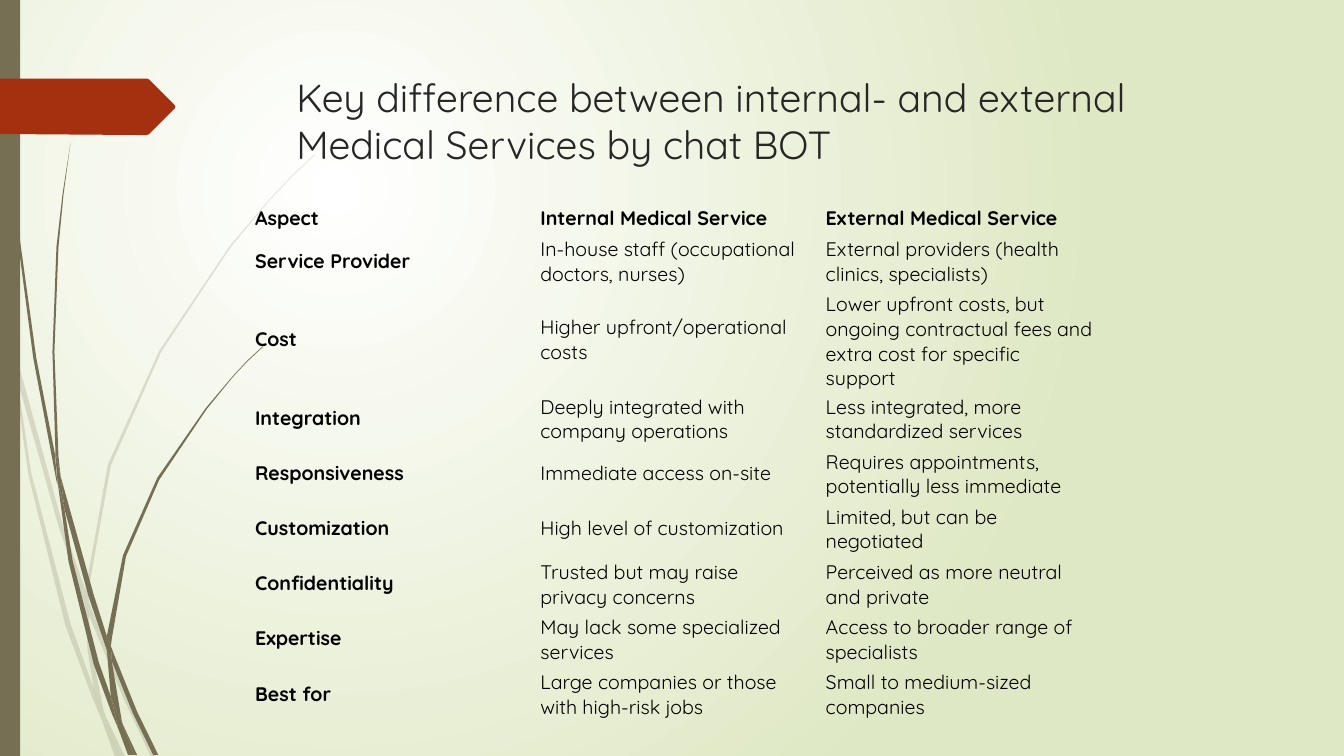
"""Build a slide comparing internal and external medical services."""
from lxml.etree import SubElement
from pptx import Presentation
from pptx.dml.color import RGBColor
from pptx.enum.shapes import MSO_SHAPE as Shape
from pptx.enum.text import MSO_ANCHOR as Anchor
from pptx.oxml.ns import qn

PX = 9144
FONT = "Quicksand"
OLIVE, RED, INK, BLACK = "766F54", "A53010", "262626", "000000"
BACKGROUND = ["FFFFFF", "DFE8C4"]
FOCUS = {"l": "50000", "t": "50000", "r": "100000", "b": "100000"}
NO_STYLE = "{2D5ABB26-0587-4C30-8999-92F81FD0307C}"

TITLE = "Key difference between internal- and external Medical Services by chat BOT"
TITLE_BOX = (284, 68, 975, 84)
TABLE_LEFT, TABLE_TOP, COLUMN = 245, 200, 283
LOW, HIGH = 31, 54
ROW_HEIGHTS = [LOW] + [HIGH] * 4 + [LOW] + [HIGH] * 3
ROWS = [
    ("Aspect", "Internal Medical Service", "External Medical Service"),
    ("Service Provider", "In-house staff (occupational doctors, nurses)",
     "External providers (health clinics, specialists)"),
    ("Cost", "Higher upfront/operational costs",
     "Lower upfront costs, but ongoing contractual fees and extra cost for specific support"),
    ("Integration", "Deeply integrated with company operations",
     "Less integrated, more standardized services"),
    ("Responsiveness", "Immediate access on-site",
     "Requires appointments, potentially less immediate"),
    ("Customization", "High level of customization", "Limited, but can be negotiated"),
    ("Confidentiality", "Trusted but may raise privacy concerns",
     "Perceived as more neutral and private"),
    ("Expertise", "May lack some specialized services",
     "Access to broader range of specialists"),
    ("Best for", "Large companies or those with high-risk jobs",
     "Small to medium-sized companies"),
]

PALE_BLADES = [
    [(11, 350), (9, 322), (0, 282), (0, 299), (10, 344)],
    [(58, 522), (84, 599), (85, 586), (62, 520), (14, 345), (17, 376)],
    [(92, 607), (88, 596), (88, 610), (123, 694), (150, 751), (155, 751), (127, 692)],
    [(119, 751), (124, 751), (105, 711)],
    [(93, 683), (70, 619), (31, 469), (17, 376), (11, 350), (28, 470), (65, 621),
     (92, 693), (101, 714), (99, 707)],
    [(84, 599), (87, 646), (93, 683), (96, 692), (105, 711), (103, 706), (91, 646),
     (88, 610), (88, 608)],
    [(88, 584), (110, 462), (160, 349), (229, 245), (268, 198), (290, 175), (312, 154),
     (312, 153), (289, 175), (268, 197), (228, 244), (158, 348), (107, 461), (85, 584),
     (85, 586), (88, 596)],
    [(101, 714), (114, 751), (119, 751)],
    [(88, 608), (88, 596), (85, 586), (84, 599)],
    [(96, 692), (93, 683), (99, 707), (101, 714), (119, 751), (105, 711)],
]
DARK_BLADES = [
    [(7, 110), (17, 233), (33, 355), (56, 477), (57, 481), (55, 457), (55, 453), (36, 355),
     (19, 232), (8, 109), (5, 48), (4, 0), (3, 0), (4, 48)],
    [(88, 592), (106, 645), (106, 631), (93, 590), (60, 472), (64, 505)],
    [(113, 649), (110, 641), (111, 656), (132, 708), (152, 749), (157, 749), (136, 706)],
    [(110, 691), (98, 657), (72, 556), (64, 505), (57, 477), (68, 557), (93, 659),
     (111, 708), (117, 722), (116, 717)],
    [(60, 472), (58, 453), (54, 349), (58, 245), (63, 193), (70, 141), (62, 193),
     (56, 245), (52, 349), (55, 449)],
    [(133, 749), (136, 749), (122, 719)],
    [(57, 477), (64, 505), (60, 472), (55, 449), (55, 453)],
    [(111, 633), (125, 552), (158, 476), (205, 406), (231, 374), (245, 359), (261, 344),
     (260, 344), (245, 358), (231, 373), (204, 405), (156, 474), (122, 551), (106, 631),
     (110, 641)],
    [(117, 722), (127, 749), (131, 749)],
    [(106, 645), (110, 691), (116, 706), (122, 719), (121, 716), (111, 656), (109, 651)],
    [(106, 645), (109, 651), (111, 656), (110, 641), (106, 631)],
    [(116, 706), (110, 691), (116, 717), (117, 722), (130, 749), (133, 749), (122, 719)],
]
PENNANT = [(173, 108), (148, 133), (146, 134), (136, 134), (0, 133), (0, 78), (136, 78),
           (146, 78), (148, 79), (173, 104), (174, 106)]


def color(value):
    """Turn a hex string into a colour."""
    return RGBColor.from_string(value)


def paint(shape, fill, opacity=100):
    """Give a shape a flat fill with no line or shadow."""
    shape.shadow.inherit = False
    shape.line.fill.background()
    shape.fill.solid()
    shape.fill.fore_color.rgb = color(fill)
    if opacity < 100:
        tone = shape.element.xpath("./p:spPr/a:solidFill/a:srgbClr")[0]
        SubElement(tone, qn("a:alpha"), val=str(opacity * 1000))


def draw_outline(shapes, points, fill, opacity=100):
    """Draw one closed outline."""
    builder = shapes.build_freeform(*points[0], scale=PX)
    builder.add_line_segments(points[1:], close=True)
    paint(builder.convert_to_shape(), fill, opacity)


def write(frame, text, ink, **formats):
    """Write one run of text with the given font formats."""
    span = frame.paragraphs[0].add_run()
    span.text = text
    span.font.color.rgb = color(ink)
    for name, value in formats.items():
        setattr(span.font, name, value)


def add_background(page):
    """Fill the page with a radial gradient."""
    fill = page.background.fill
    fill.gradient()
    for stop, tone, position in zip(fill.gradient_stops, BACKGROUND, (0, 1)):
        stop.color.rgb = color(tone)
        stop.position = position
    gradient = page.element.xpath(".//a:gradFill")[0]
    gradient.remove(gradient.find(qn("a:lin")))
    radial = SubElement(gradient, qn("a:path"), path="circle")
    SubElement(radial, qn("a:fillToRect"), FOCUS)


def add_decoration(page):
    """Draw the grass blades, the side bar and the pennant."""
    for blades, opacity in ((PALE_BLADES, 20), (DARK_BLADES, 100)):
        group = page.shapes.add_group_shape()
        for points in blades:
            draw_outline(group.shapes, points, OLIVE, opacity)
    paint(page.shapes.add_shape(Shape.RECTANGLE, 0, 0, 20 * PX, 750 * PX), OLIVE)
    draw_outline(page.shapes, PENNANT, RED)


def add_title(page):
    """Write the slide title."""
    box = page.shapes.add_textbox(*(value * PX for value in TITLE_BOX))
    box.text_frame.word_wrap = True
    write(box.text_frame, TITLE, INK, size=28 * 12700, name=FONT)


def add_comparison(page):
    """Add the comparison table with bold headings."""
    frame = page.shapes.add_table(
        len(ROWS), len(ROWS[0]), TABLE_LEFT * PX, TABLE_TOP * PX,
        COLUMN * len(ROWS[0]) * PX, sum(ROW_HEIGHTS) * PX)
    table = frame.table
    table.first_row = table.horz_banding = False
    frame.element.xpath(".//a:tableStyleId")[0].text = NO_STYLE
    margins = {"margin_left": 8, "margin_right": 8, "margin_top": 4, "margin_bottom": 4}
    for column in table.columns:
        column.width = COLUMN * PX
    for row_index, texts in enumerate(ROWS):
        table.rows[row_index].height = ROW_HEIGHTS[row_index] * PX
        for column_index, text in enumerate(texts):
            cell = table.cell(row_index, column_index)
            cell.fill.background()
            cell.vertical_anchor = Anchor.MIDDLE
            for name, value in margins.items():
                setattr(cell, name, value * PX)
            write(cell.text_frame, text, BLACK, size=14 * 12700, name=FONT,
                  bold=row_index == 0 or column_index == 0)


def main():
    """Build and save the deck."""
    deck = Presentation()
    deck.slide_width, deck.slide_height = 1333 * PX, 750 * PX
    page = deck.slides.add_slide(deck.slide_layouts[6])
    for add_part in (add_background, add_decoration, add_title, add_comparison):
        add_part(page)
    deck.save("out.pptx")


if __name__ == "__main__":
    main()
